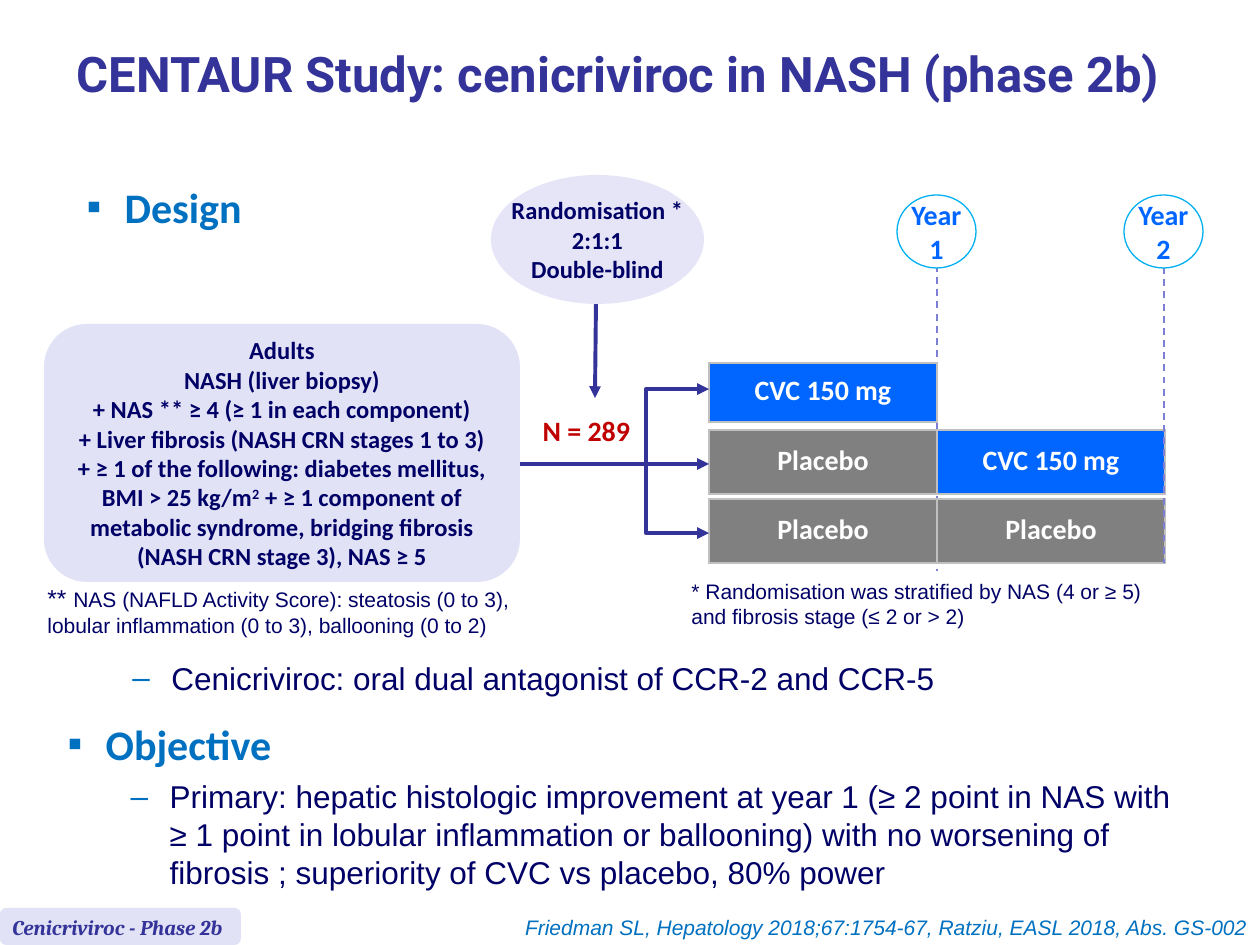
from pptx import Presentation
from pptx.dml.color import RGBColor
from pptx.enum.dml import MSO_LINE_DASH_STYLE as Dash
from pptx.enum.shapes import MSO_CONNECTOR as Connector, MSO_SHAPE as Shape
from pptx.enum.text import MSO_ANCHOR as Anchor, MSO_AUTO_SIZE as AutoSize, PP_ALIGN as Align
from pptx.oxml.ns import qn
from pptx.util import Emu, Pt
from lxml.etree import SubElement

PX = 914400 / 126
COLORS = {
    "navy": "000066", "indigo": "333399", "blue": "0070C0", "bright": "0066FF",
    "sky": "00B0F0", "red": "C00000", "white": "FFFFFF", "grey": "808080",
    "silver": "C0C0C0", "lilac": "E2E2F6", "pale": "E5E5F7", "violet": "7E7ED4",
}


def px(value):
    return Emu(round(value * PX))


def box_px(box):
    return [px(value) for value in box]


def rgb(name):
    return RGBColor.from_string(COLORS[name])


def format_runs(paragraph, font, size, color, bold=False, italic=False):
    for run in paragraph.runs:
        run.font.name = font
        run.font.size = Pt(size)
        run.font.color.rgb = rgb(color)
        run.font.bold = bold
        run.font.italic = italic


def write(frame, text, style, align=Align.LEFT, wrap=True):
    frame.text = text
    frame.word_wrap = wrap
    for paragraph in frame.paragraphs:
        paragraph.alignment = align
        format_runs(paragraph, *style)


def add_text(slide, box, text, style, align=Align.LEFT, wrap=True):
    frame = slide.shapes.add_textbox(*box_px(box)).text_frame
    write(frame, text, style, align, wrap)
    return frame


def add_shape(slide, kind, box, fill, line=None):
    shape = slide.shapes.add_shape(kind, *box_px(box))
    shape.shadow.inherit = False
    shape.fill.solid()
    shape.fill.fore_color.rgb = rgb(fill)
    if line:
        shape.line.color.rgb = rgb(line)
        shape.line.width = Pt(0.75)
    else:
        shape.line.fill.background()
    shape.text_frame.vertical_anchor = Anchor.MIDDLE
    return shape


def style_line(shape, color, width, arrows=()):
    """Colour a line; arrows names its arrow ends, headEnd before tailEnd."""
    shape.line.color.rgb = rgb(color)
    shape.line.width = Pt(width)
    for end in arrows:
        SubElement(shape.line._get_or_add_ln(), qn("a:" + end), type="triangle")


def add_line(slide, start, stop, color="indigo", width=2.25, arrows=()):
    line = slide.shapes.add_connector(Connector.STRAIGHT, *box_px(start + stop))
    style_line(line, color, width, arrows)
    SubElement(line._element.spPr, qn("a:effectLst"))
    return line


def add_bracket(slide, points):
    """Draw an open polyline with an arrowhead at both ends."""
    start, *rest = [tuple(box_px(point)) for point in points]
    builder = slide.shapes.build_freeform(*start)
    builder.add_line_segments(rest, close=False)
    bracket = builder.convert_to_shape()
    bracket.shadow.inherit = False
    bracket.fill.background()
    style_line(bracket, "indigo", 2.25, ("headEnd", "tailEnd"))


def add_bullet(paragraph, char, margin, hanging, space=0):
    paragraph.space_before = Pt(space)
    properties = paragraph._p.get_or_add_pPr()
    properties.set("marL", str(px(margin)))
    properties.set("indent", str(-px(hanging)))
    color = SubElement(properties, qn("a:buClr"))
    SubElement(color, qn("a:srgbClr"), val=COLORS["blue"])
    SubElement(properties, qn("a:buFont"), typeface="Arial")
    SubElement(properties, qn("a:buChar"), char=char)


def place(placeholder, box):
    placeholder.left, placeholder.top, placeholder.width, placeholder.height = box_px(box)
    placeholder.text_frame.auto_size = AutoSize.NONE
    return placeholder.text_frame


def add_section(placeholder, box, heading, detail=None):
    frame = place(placeholder, box)
    frame.text = heading
    add_bullet(frame.paragraphs[0], "▪", 38, 38)
    format_runs(frame.paragraphs[0], "Calibri", 24, "blue", True)
    if detail:
        paragraph = frame.add_paragraph()
        paragraph.text = detail
        paragraph.level = 1
        add_bullet(paragraph, "–", 102, 39, 5)
        format_runs(paragraph, "Arial", 18, "navy")


def add_arm(slide, box, text, fill):
    """Draw one treatment period as a one-cell table."""
    table = slide.shapes.add_table(1, 1, *box_px(box)).table
    table.first_row = table.horz_banding = False
    cell = table.cell(0, 0)
    write(cell.text_frame, text, ("Calibri", 16, "white", True), Align.CENTER)
    cell.text_frame.paragraphs[0].line_spacing = 0.8
    cell.vertical_anchor = Anchor.MIDDLE
    properties = cell._tc.get_or_add_tcPr()
    for side in "LRTB":
        border = SubElement(properties, qn("a:ln" + side), w=str(Pt(1)))
        paint = SubElement(border, qn("a:solidFill"))
        SubElement(paint, qn("a:srgbClr"), val=COLORS["silver"])
    cell.fill.solid()
    cell.fill.fore_color.rgb = rgb(fill)


def add_year_line(slide, x, top, bottom):
    add_line(slide, (x, top), (x, bottom), "violet", 1).line.dash_style = Dash.DASH


def add_year(slide, x, number):
    circle = add_shape(slide, Shape.OVAL, (x - 40, 195, 79, 73), "white", "sky")
    write(circle.text_frame, f"Year\n{number}", ("Calibri", 16, "bright", True),
          Align.CENTER, wrap=False)


def add_population(slide):
    shape = add_shape(slide, Shape.ROUNDED_RECTANGLE, (44, 324, 476, 258), "lilac")
    style = ("Calibri", 14, "navy", True)
    lines = ["Adults", "NASH (liver biopsy)", "+ NAS ** ≥ 4 (≥ 1 in each component)",
             "+ Liver fibrosis (NASH CRN stages 1 to 3)",
             "+ ≥ 1 of the following: diabetes mellitus,", "BMI > 25 kg/m",
             "metabolic syndrome, bridging fibrosis (NASH CRN stage 3), NAS ≥ 5"]
    write(shape.text_frame, "\n".join(lines), style, Align.CENTER)
    body_mass = shape.text_frame.paragraphs[5]
    square = body_mass.add_run()
    square.text = "2"
    body_mass.add_run().text = " + ≥ 1 component of"
    format_runs(body_mass, *style)
    square._r.get_or_add_rPr().set("baseline", "30000")


def add_flow(slide):
    year_one, year_two, branch = 937, 1164, 646
    small = ("Calibri", 14, "navy", True)
    add_year_line(slide, year_one, 265, 571)
    add_population(slide)
    add_text(slide, (530, 407, 113, 47), "N = 289", ("Calibri", 16, "red", True),
             Align.CENTER, wrap=False)
    add_year(slide, year_one, 1)
    add_line(slide, (596, 304), (595, 398), arrows=("tailEnd",))
    oval = add_shape(slide, Shape.OVAL, (491, 175, 213, 129), "pale")
    write(oval.text_frame, "Randomisation *\n2:1:1\nDouble-blind", small, Align.CENTER, wrap=False)
    arms = [(363, 59, ["CVC 150 mg"]), (430, 64, ["Placebo", "CVC 150 mg"]),
            (499, 64, ["Placebo", "Placebo"])]
    for top, height, periods in arms:
        for column, period in enumerate(periods):
            fill = "grey" if period == "Placebo" else "bright"
            add_arm(slide, (709 + 228 * column, top, 228, height), period, fill)
    add_year_line(slide, year_two, 255, 563)
    add_year(slide, year_two, 2)
    add_line(slide, (520, 464), (branch, 464))
    add_bracket(slide, [(709, 389), (branch, 389), (branch, 533), (709, 533)])
    add_line(slide, (branch, 464), (709, 464), arrows=("tailEnd",))


def add_notes_and_footer(slide):
    note = ("Arial", 12, "navy")
    frame = add_text(slide, (35, 577, 507, 68), "** ", ("Arial", 14, "navy"))
    run = frame.paragraphs[0].add_run()
    run.text = ("NAS (NAFLD Activity Score): steatosis (0 to 3), lobular inflammation "
                "(0 to 3), ballooning (0 to 2)")
    format_runs(frame.paragraphs[0], *note)
    frame.paragraphs[0].runs[0].font.size = Pt(14)
    add_text(slide, (679, 572, 496, 63), "* Randomisation was stratified by NAS (4 or ≥ 5)\n"
             "and fibrosis stage (≤ 2 or > 2)", note)
    drug = add_text(slide, (120, 653, 956, 50), "Cenicriviroc: oral dual antagonist of CCR-2 and CCR-5",
                    ("Arial", 18, "navy"))
    add_bullet(drug.paragraphs[0], "‒", 39, 39)
    add_shape(slide, Shape.ROUNDED_RECTANGLE, (0, 908, 241, 37), "lilac")
    add_text(slide, (0, 908, 241, 37), "Cenicriviroc - Phase 2b", ("Cambria", 12, "indigo", True, True))
    add_text(slide, (333, 908, 927, 37),
             "Friedman SL, Hepatology 2018;67:1754-67, Ratziu, EASL 2018, Abs. GS-002",
             ("Arial", 12, "blue", False, True), Align.RIGHT)


def main():
    presentation = Presentation()
    presentation.slide_width, presentation.slide_height = px(1260), px(945)
    slide = presentation.slides.add_slide(presentation.slide_layouts[3])
    title, design, objective = slide.placeholders
    frame = place(title, (64, 10, 1150, 135))
    write(frame, "CENTAUR Study: cenicriviroc in NASH (phase 2b)", ("Roboto", 28, "indigo", True))
    frame.vertical_anchor = Anchor.MIDDLE
    frame.paragraphs[0].line_spacing = 0.85
    add_section(design, (74, 175, 1150, 72), "Design")
    add_section(objective, (55, 712, 1149, 147), "Objective",
                "Primary: hepatic histologic improvement at year 1 (≥ 2 point in NAS with "
                "≥ 1 point in lobular inflammation or ballooning) with no worsening of "
                "fibrosis ; superiority of CVC vs placebo, 80% power")
    add_flow(slide)
    add_notes_and_footer(slide)
    presentation.save("out.pptx")


if __name__ == "__main__":
    main()
